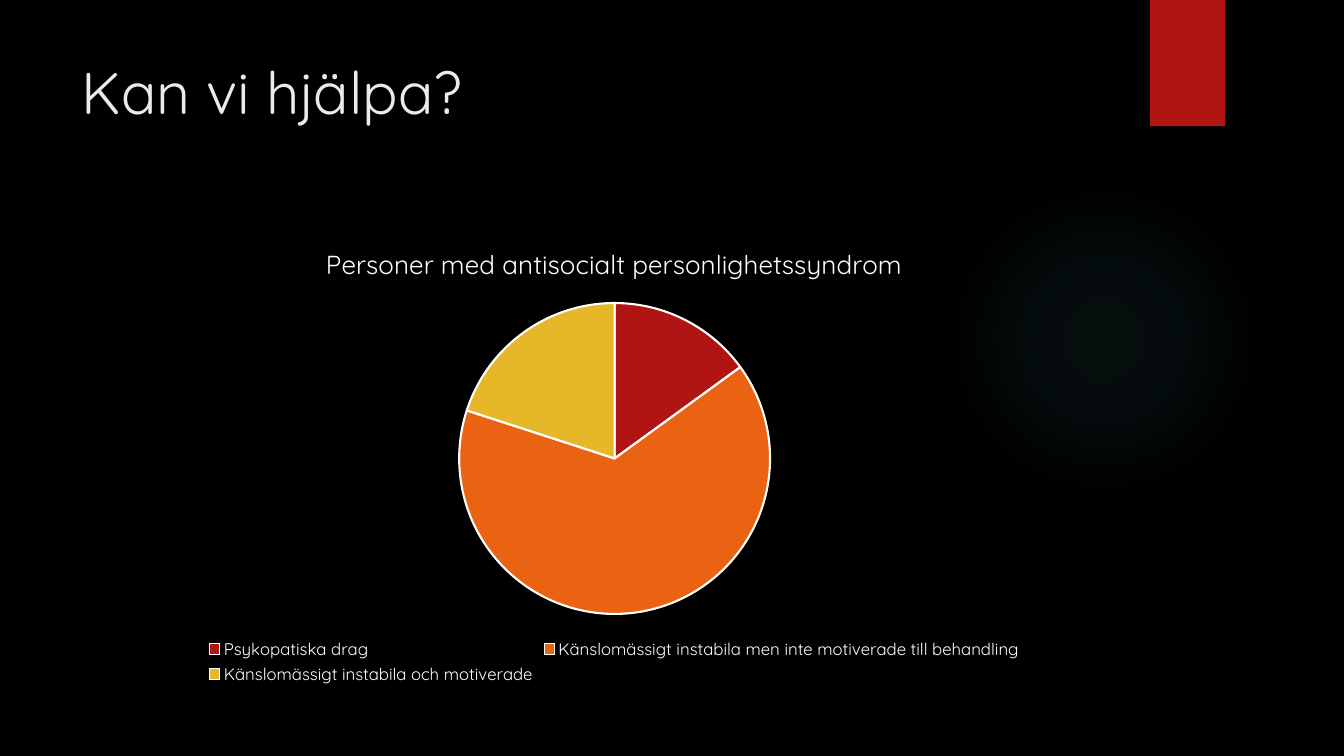
from pptx import Presentation
from pptx.chart.data import CategoryChartData
from pptx.dml.color import RGBColor
from pptx.enum.chart import XL_CHART_TYPE as ChartType, XL_LEGEND_POSITION as LegendPosition
from pptx.enum.shapes import MSO_SHAPE as Preset
from pptx.enum.text import MSO_ANCHOR as Anchor
from pptx.oxml import parse_xml
from pptx.oxml.ns import nsdecls
from pptx.util import Cm, Pt

FONT = "Quicksand"
WHITE = "FFFFFF"
TITLE = "Kan vi hjälpa?"
CHART_TITLE = "Personer med antisocialt personlighetssyndrom"
SLICES = [
    ("Psykopatiska drag", 15, "B01513"),
    ("Känslomässigt instabila men inte motiverade till behandling", 65, "EA6312"),
    ("Känslomässigt instabila och motiverade", 20, "E6B729"),
]
GLOW_COLOR = "50B9C1"
GLOW_STOPS = [(0, 7), (36, 6), (69, 0)]
PIE_LAYOUT = {"x": 0.342, "y": 0.167, "w": 0.316, "h": 0.672}


def color(value):
    return RGBColor.from_string(value)


def style_font(font, size, value):
    font.name, font.size, font.bold = FONT, Pt(size), False
    font.color.rgb = color(value)


def write(frame, text, size=18, value=WHITE):
    paragraph = frame.paragraphs[0]
    run = paragraph.add_run()
    run.text = text
    style_font(run.font, size, value)


def add_plain_shape(slide, preset, left, top, width, height, fill):
    shape = slide.shapes.add_shape(preset, Cm(left), Cm(top), Cm(width), Cm(height))
    shape.shadow.inherit = False
    shape.line.fill.background()
    shape.fill.solid()
    shape.fill.fore_color.rgb = color(fill)
    return shape


def add_glow(slide):
    shape = add_plain_shape(slide, Preset.OVAL, 23.9, 4.65, 7.82, 7.82, GLOW_COLOR)
    stops = "".join(
        f'<a:gs pos="{position * 1000}"><a:srgbClr val="{GLOW_COLOR}">'
        f'<a:alpha val="{alpha * 1000}"/></a:srgbClr></a:gs>'
        for position, alpha in GLOW_STOPS
    )
    gradient = parse_xml(
        f'<a:gradFill {nsdecls("a")} rotWithShape="1"><a:gsLst>{stops}</a:gsLst>'
        '<a:path path="circle"><a:fillToRect l="50000" t="50000" r="50000" b="50000"/>'
        "</a:path></a:gradFill>"
    )
    properties = shape.element.spPr
    properties.replace(properties.solidFill, gradient)


def add_title(slide):
    box = slide.shapes.add_textbox(Cm(1.8), Cm(1.27), Cm(26.14), Cm(3.89))
    box.text_frame.word_wrap = True
    box.text_frame.vertical_anchor = Anchor.TOP
    write(box.text_frame, TITLE, size=42, value="EBEBEB")


def add_pie(slide):
    names, values, fills = zip(*SLICES)
    data = CategoryChartData()
    data.categories = names
    data.add_series(CHART_TITLE, values)
    chart = slide.shapes.add_chart(
        ChartType.PIE, Cm(3.07), Cm(5.69), Cm(24.84), Cm(11.66), data
    ).chart
    style_font(chart.font, 10, WHITE)
    chart.has_title = True
    write(chart.chart_title.text_frame, CHART_TITLE, size=18.6)
    chart.chart_title.include_in_layout = False
    chart.has_legend = True
    chart.legend.position = LegendPosition.BOTTOM
    chart.legend.include_in_layout = False
    style_font(chart.legend.font, 12, WHITE)

    plot = chart.plots[0]
    plot.vary_by_categories = True
    for index, fill in enumerate(fills):
        slice_format = plot.series[0].points[index].format
        slice_format.fill.solid()
        slice_format.fill.fore_color.rgb = color(fill)
        slice_format.line.color.rgb = color(WHITE)
        slice_format.line.width = Pt(1.5)

    sizes = "".join(f'<c:{key} val="{value}"/>' for key, value in PIE_LAYOUT.items())
    layout = parse_xml(
        f'<c:layout {nsdecls("c")}><c:manualLayout><c:layoutTarget val="inner"/>'
        f'<c:xMode val="edge"/><c:yMode val="edge"/>{sizes}</c:manualLayout></c:layout>'
    )
    area = chart.element.chart.plotArea
    for existing in area.findall(layout.tag):
        area.remove(existing)
    area.insert(0, layout)


def main():
    presentation = Presentation()
    presentation.slide_width, presentation.slide_height = Cm(33.87), Cm(19.05)
    slide = presentation.slides.add_slide(presentation.slide_layouts[6])
    slide.background.fill.solid()
    slide.background.fill.fore_color.rgb = color("000000")
    add_glow(slide)
    add_plain_shape(slide, Preset.RECTANGLE, 28.98, 0, 1.9, 3.18, "B01513")
    add_title(slide)
    add_pie(slide)
    presentation.save("out.pptx")


if __name__ == "__main__":
    main()
